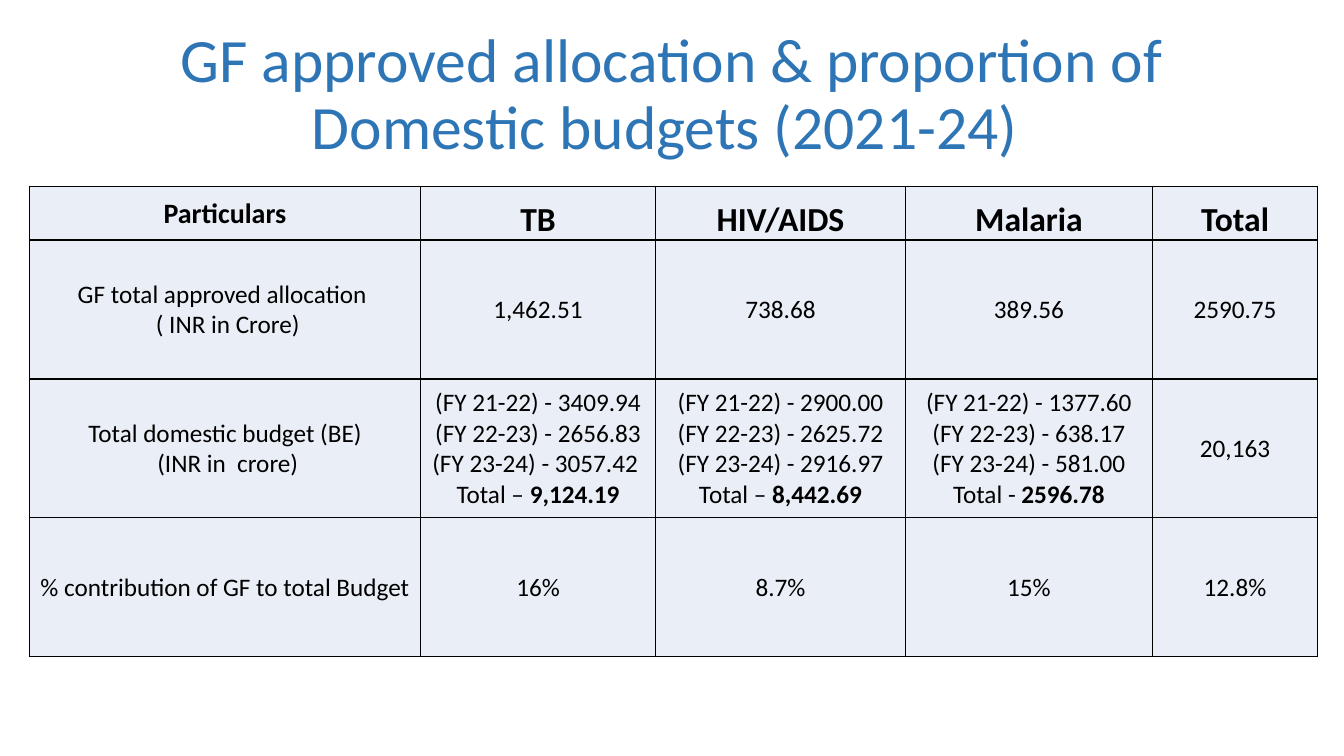
"""Build the slide on approved GF allocation against domestic budgets."""
from dataclasses import dataclass

from lxml.etree import SubElement
from pptx import Presentation
from pptx.dml.color import RGBColor
from pptx.enum.text import MSO_ANCHOR, PP_ALIGN
from pptx.oxml.ns import qn
from pptx.util import Cm, Pt

TITLE = "GF approved allocation & proportion of Domestic budgets (2021-24) "
HEADINGS = ["Particulars", "TB", "HIV/AIDS", "Malaria", "Total"]
ALLOCATION = ["GF total approved allocation \n ( INR in Crore)",
              "1,462.51", "738.68", "389.56", "2590.75"]
BUDGET = [
    "Total domestic budget (BE)\n (INR in  crore)",
    "(FY 21-22) - 3409.94\n(FY 22-23) - 2656.83\n(FY 23-24) - 3057.42 \nTotal – ",
    "(FY 21-22) - 2900.00\n(FY 22-23) - 2625.72\n(FY 23-24) - 2916.97\nTotal – ",
    "(FY 21-22) - 1377.60\n(FY 22-23) - 638.17\n(FY 23-24) - 581.00\nTotal - ",
    "20,163",
]
CONTRIBUTION = ["% contribution of GF to total Budget", "16%", "8.7%", "15%", "12.8%"]
ROWS = [HEADINGS, ALLOCATION, BUDGET, CONTRIBUTION]
BUDGET_TOTALS = {1: "9,124.19", 2: "8,442.69", 3: "2596.78"}
COLUMN_WIDTHS = [9.86, 5.92, 6.3, 6.22, 4.17]
ROW_HEIGHTS = [1.35, 3.5, 3.5, 3.5]


@dataclass(frozen=True)
class Theme:
    """Colours and type sizes of the slide."""
    font: str = "Calibri"
    title: str = "2E75B6"
    ink: str = "000000"
    cell: str = "EAEFF7"
    title_size: int = 44
    heading_size: int = 24
    label_size: int = 20
    body_size: int = 18
    border: int = 1


THEME = Theme()


def style_span(span, size, color, bold=False):
    """Set the type of one run."""
    span.font.name = THEME.font
    span.font.size = Pt(size)
    span.font.bold = bold
    span.font.color.rgb = RGBColor.from_string(color)


def add_title(page):
    """Place the centred title."""
    box = page.shapes.add_textbox(Cm(2.33), Cm(0.58), Cm(29.21), Cm(3.68))
    frame = box.text_frame
    frame.word_wrap = True
    frame.vertical_anchor = MSO_ANCHOR.MIDDLE
    frame.text = TITLE
    para = frame.paragraphs[0]
    para.alignment = PP_ALIGN.CENTER
    para.line_spacing = 0.9
    style_span(para.runs[0], THEME.title_size, THEME.title)


def add_borders(cell):
    """Draw a solid line on each side of a cell."""
    properties = cell._tc.get_or_add_tcPr()
    for side in ("a:lnL", "a:lnR", "a:lnT", "a:lnB"):
        line = SubElement(properties, qn(side), w=str(Pt(THEME.border)))
        fill = SubElement(line, qn("a:solidFill"))
        SubElement(fill, qn("a:srgbClr"), val=THEME.ink)


def fill_cell(cell, text, total, size, bold, anchor):
    """Write and style one table cell."""
    add_borders(cell)
    cell.fill.solid()
    cell.fill.fore_color.rgb = RGBColor.from_string(THEME.cell)
    cell.margin_left = cell.margin_right = cell.margin_top = Cm(0.02)
    cell.margin_bottom = 0
    cell.vertical_anchor = anchor
    cell.text_frame.text = text
    for para in cell.text_frame.paragraphs:
        para.alignment = PP_ALIGN.CENTER
        for span in para.runs:
            style_span(span, size, THEME.ink, bold)
    if total:
        span = cell.text_frame.paragraphs[-1].add_run()
        span.text = total
        style_span(span, size, THEME.ink, True)


def add_budget_table(page):
    """Place the table of allocations and budgets."""
    table = page.shapes.add_table(
        len(ROWS), len(HEADINGS), Cm(0.74), Cm(4.7),
        Cm(sum(COLUMN_WIDTHS)), Cm(sum(ROW_HEIGHTS))).table
    for column, width in zip(table.columns, COLUMN_WIDTHS):
        column.width = Cm(width)
    for row, height in zip(table.rows, ROW_HEIGHTS):
        row.height = Cm(height)
    for row_index, values in enumerate(ROWS):
        heading = values is HEADINGS
        for column_index, text in enumerate(values):
            size, anchor = THEME.body_size, MSO_ANCHOR.MIDDLE
            if heading and column_index == 0:
                size = THEME.label_size
            elif heading:
                size, anchor = THEME.heading_size, MSO_ANCHOR.BOTTOM
            total = BUDGET_TOTALS.get(column_index) if values is BUDGET else None
            fill_cell(table.cell(row_index, column_index), text, total, size, heading, anchor)


def main():
    """Build and save the deck."""
    deck = Presentation()
    deck.slide_width, deck.slide_height = Cm(33.87), Cm(19.05)
    page = deck.slides.add_slide(deck.slide_layouts[6])
    add_title(page)
    add_budget_table(page)
    deck.save("out.pptx")


if __name__ == "__main__":
    main()
